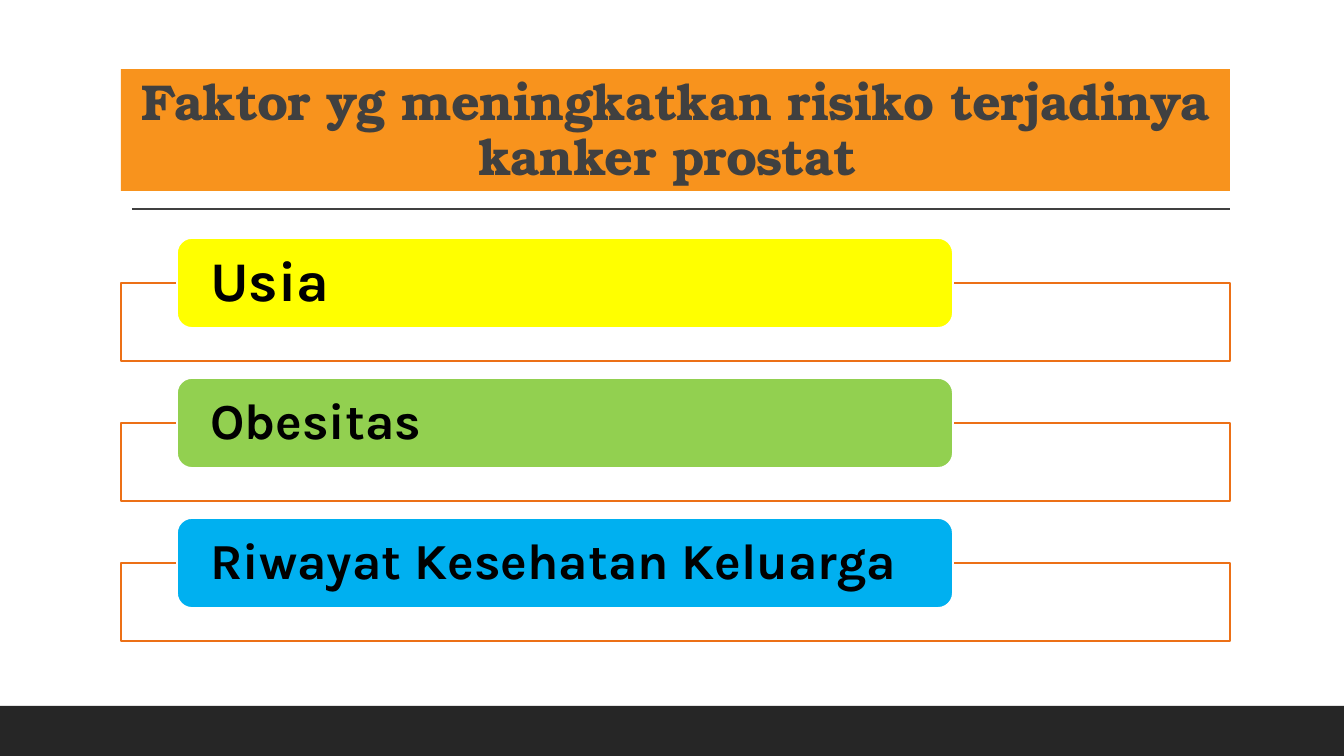
import pptx
import pptx.util
import pptx.dml.color
import pptx.enum.shapes
import pptx.enum.text
import pptx.oxml.ns
import lxml.etree

TITLE = "Faktor yg meningkatkan risiko terjadinya kanker prostat "
FACTORS = [
    ("Usia", 40, "yellow"),
    ("Obesitas", 36, "green"),
    ("Riwayat Kesehatan Keluarga", 36, "blue"),
]
COLORS = {
    "dark": "262626", "gray": "404040", "orange": "F8931D", "border": "EC7016",
    "white": "FFFFFF", "black": "000000",
    "yellow": "FFFF00", "green": "92D050", "blue": "00B0F0",
}
SLIDE_W, SLIDE_H = 1344, 756
LEFT, WIDTH = 121, 1109
CARD_LEFT, CARD_W, CARD_H = 177, 776, 90
FRAME_H = 78
FIRST_TOP, PITCH = 238, 140
SHAPES = pptx.enum.shapes.MSO_SHAPE
ALIGN = pptx.enum.text.PP_ALIGN
ANCHOR = pptx.enum.text.MSO_ANCHOR
qn = pptx.oxml.ns.qn


def px(n):
    return pptx.util.Emu(round(n * 914400 / 100.8))


def rgb(name):
    return pptx.dml.color.RGBColor.from_string(COLORS[name])


def add_box(s, kind, x, y, w, h, fill, line=None, alpha=None):
    sp = s.shapes.add_shape(kind, px(x), px(y), px(w), px(h))
    sp.shadow.inherit = False
    sp.fill.solid()
    sp.fill.fore_color.rgb = rgb(fill)
    if alpha:
        clr = sp._element.spPr.find(qn("a:solidFill"))[0]
        lxml.etree.SubElement(clr, qn("a:alpha")).set("val", str(alpha * 1000))
    if line:
        sp.line.color.rgb = rgb(line)
        sp.line.width = pptx.util.Pt(1.25)
    else:
        sp.line.fill.background()
    return sp


def write(sp, text, size, font, color, align, anchor, inset=(10, 5), spacing=None):
    tf = sp.text_frame
    tf.word_wrap = True
    tf.auto_size = pptx.enum.text.MSO_AUTO_SIZE.NONE
    tf.vertical_anchor = anchor
    tf.margin_left = tf.margin_right = px(inset[0])
    tf.margin_top = tf.margin_bottom = px(inset[1])
    p = tf.paragraphs[0]
    p.alignment = align
    p.line_spacing = 0.9
    r = p.add_run()
    r.text = text
    r.font.size = pptx.util.Pt(size)
    r.font.name = font
    r.font.bold = True
    r.font.color.rgb = rgb(color)
    if spacing:
        r._r.get_or_add_rPr().set("spc", str(spacing))


def main():
    prs = pptx.Presentation()
    prs.slide_width, prs.slide_height = px(SLIDE_W), px(SLIDE_H)
    s = prs.slides.add_slide(prs.slide_layouts[5])

    add_box(s, SHAPES.RECTANGLE, 0, 706, SLIDE_W, 50, "dark")
    rule = s.shapes.add_connector(
        pptx.enum.shapes.MSO_CONNECTOR.STRAIGHT, px(132), px(209), px(1230), px(209))
    rule.line.color.rgb = rgb("gray")
    rule.line.width = pptx.util.Pt(1)
    lxml.etree.SubElement(rule._element.spPr, qn("a:effectLst"))

    title = s.shapes.title
    title.left, title.top, title.width, title.height = px(LEFT), px(69), px(WIDTH), px(122)
    title.fill.solid()
    title.fill.fore_color.rgb = rgb("orange")
    write(title, TITLE, 36, "TeX Gyre Bonum", "gray", ALIGN.CENTER, ANCHOR.BOTTOM,
          spacing=-50)

    for i, (text, size, fill) in enumerate(FACTORS):
        top = FIRST_TOP + i * PITCH
        add_box(s, SHAPES.RECTANGLE, LEFT, top + CARD_H / 2, WIDTH, FRAME_H,
                "white", "border", alpha=90)
        card = add_box(s, SHAPES.ROUNDED_RECTANGLE, CARD_LEFT, top, CARD_W, CARD_H,
                       fill, "white")
        write(card, text, size, "Karla", "black", ALIGN.LEFT, ANCHOR.MIDDLE, inset=(29, 0))

    prs.save("out.pptx")


if __name__ == "__main__":
    main()
